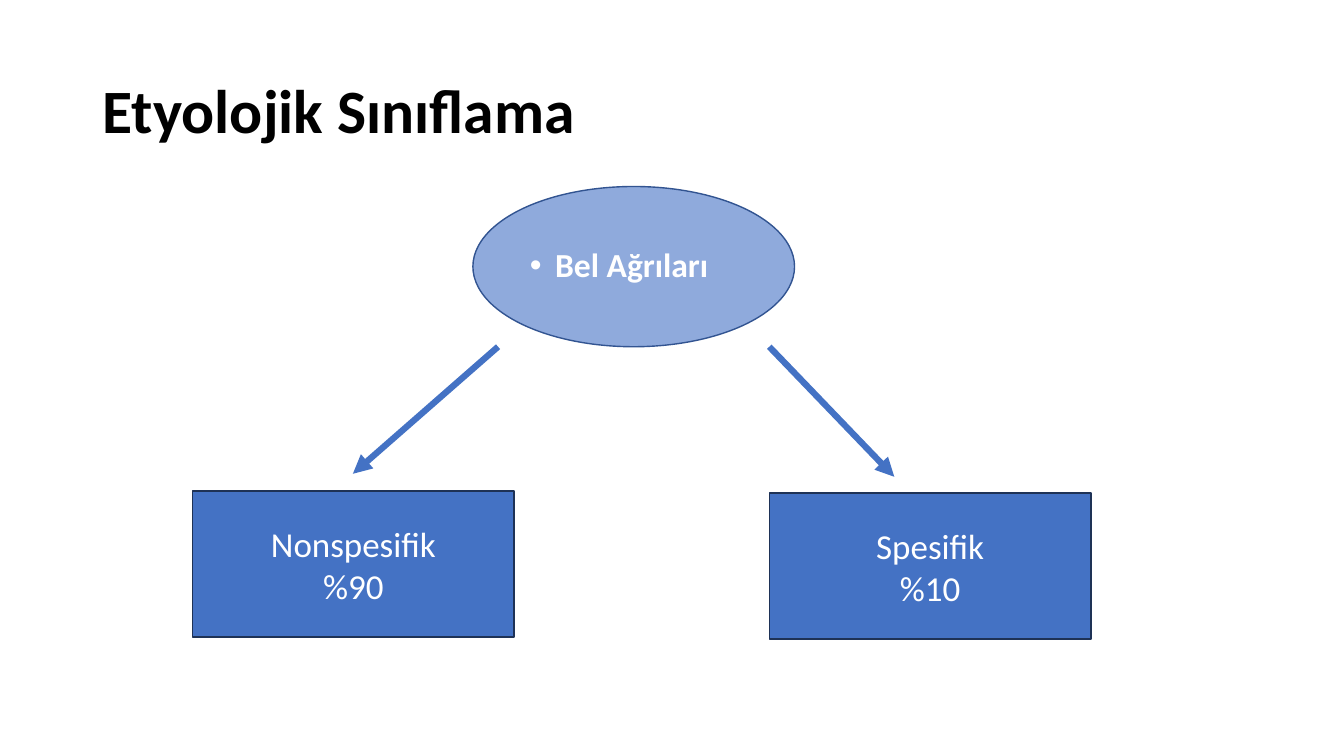
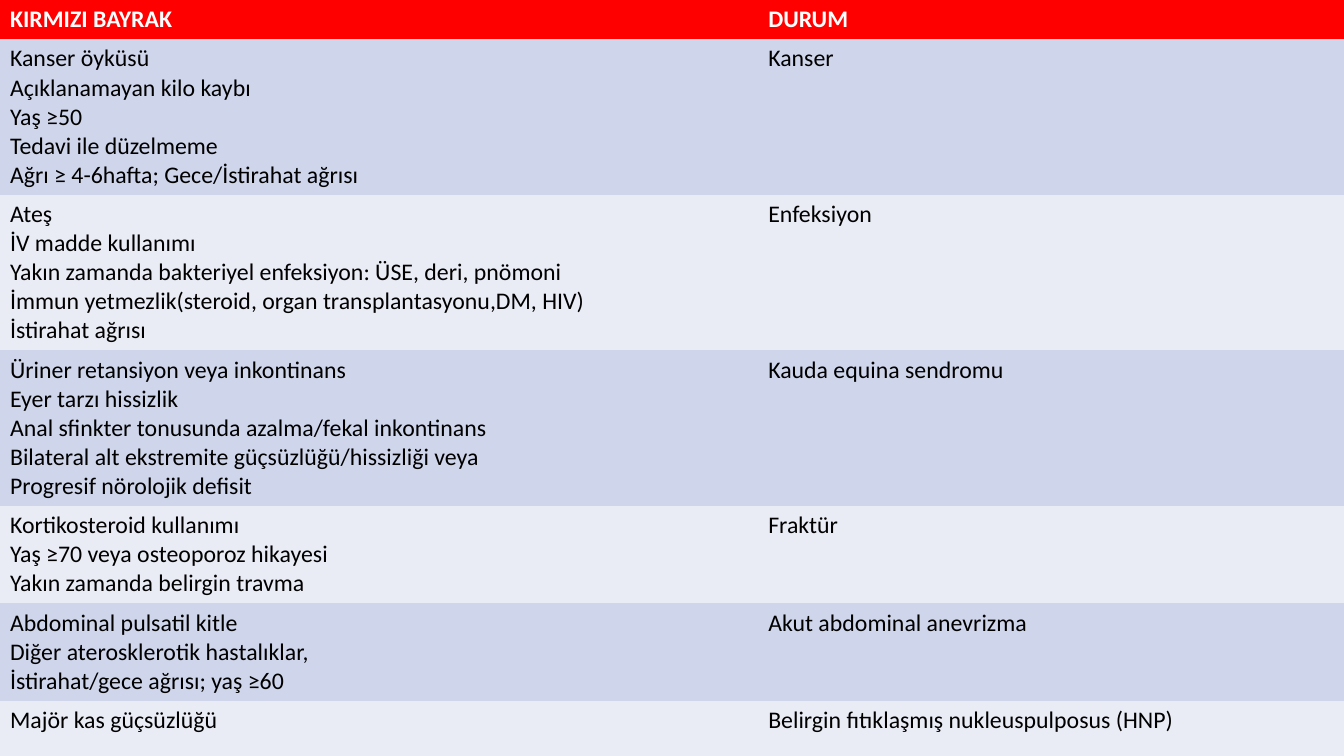
from lxml import etree
from pptx import Presentation
from pptx.dml.color import RGBColor as RGB
from pptx.enum.shapes import MSO_CONNECTOR as LINK, MSO_SHAPE as SHAPE
from pptx.enum.text import MSO_ANCHOR as ANCHOR, PP_ALIGN as ALIGN
from pptx.oxml.ns import qn
from pptx.util import Inches, Pt

THEME = {
    "font": "Calibri",
    "arrow": RGB.from_string("4472C4"),
    "arrow_width": Pt(4.5),
    "header_fill": RGB.from_string("FF0000"),
    "band_fills": [RGB.from_string("CFD5EA"), RGB.from_string("E9EBF5")],
    "topic_fill": RGB.from_string("8FAADC"),
    "topic_line": RGB.from_string("325491"),
    "cause_fill": RGB.from_string("4472C4"),
    "cause_line": RGB.from_string("1E3256"),
    "outline_width": Pt(1),
    "text": {
        "title": {"color": RGB(0, 0, 0), "font": {"size": Pt(44), "bold": True},
                  "paragraph": {"alignment": ALIGN.LEFT, "line_spacing": 0.9}},
        "topic": {"color": RGB(255, 255, 255), "font": {"size": Pt(24), "bold": True},
                  "paragraph": {"alignment": ALIGN.LEFT, "line_spacing": 0.9,
                                "space_before": Pt(10)}},
        "cause": {"color": RGB(255, 255, 255), "font": {"size": Pt(25), "bold": False},
                  "paragraph": {"alignment": ALIGN.CENTER}},
        "header": {"color": RGB(255, 255, 255), "font": {"size": Pt(17), "bold": True},
                   "paragraph": {"alignment": ALIGN.LEFT}},
        "cell": {"color": RGB(0, 0, 0), "font": {"size": Pt(17), "bold": False},
                 "paragraph": {"alignment": ALIGN.LEFT}},
    },
}
NO_GRID_STYLE = "{2D5ABB26-0587-4C30-8999-92F81FD0307C}"


def write(frame, text, role):
    style = THEME["text"][role]
    frame.text = text
    for paragraph in frame.paragraphs:
        for name, value in style["paragraph"].items():
            setattr(paragraph, name, value)
        for run in paragraph.runs:
            run.font.name = THEME["font"]
            run.font.color.rgb = style["color"]
            for name, value in style["font"].items():
                setattr(run.font, name, value)


def add_node(slide, kind, box, text, role):
    node = slide.shapes.add_shape(kind, *map(Inches, box))
    node.shadow.inherit = False
    node.fill.solid()
    node.fill.fore_color.rgb = THEME[role + "_fill"]
    node.line.color.rgb = THEME[role + "_line"]
    node.line.width = THEME["outline_width"]
    node.text_frame.word_wrap = True
    node.text_frame.vertical_anchor = ANCHOR.MIDDLE
    write(node.text_frame, text, role)
    return node


deck = Presentation()
deck.slide_width, deck.slide_height = Inches(13.33), Inches(7.5)
blank = deck.slide_layouts[6]

etiology = deck.slides.add_slide(blank)
title = etiology.shapes.add_textbox(Inches(0.92), Inches(0.4), Inches(11.5), Inches(1.45))
title.text_frame.word_wrap = True
title.text_frame.vertical_anchor = ANCHOR.MIDDLE
write(title.text_frame, "Etyolojik Sınıflama", "title")

topic = add_node(etiology, SHAPE.OVAL, (4.69, 1.85, 3.19, 1.59), "Bel Ağrıları", "topic")
topic_props = topic.text_frame.paragraphs[0]._p.get_or_add_pPr()
topic_props.set("marL", str(Inches(0.25)))
topic_props.set("indent", str(-Inches(0.25)))
etree.SubElement(topic_props, qn("a:buFont"), typeface="Arial")
etree.SubElement(topic_props, qn("a:buChar"), char="•")

causes = [
    ("Nonspesifik\n%90", (1.91, 4.87), (4.94, 3.44), (3.5, 4.7)),
    ("Spesifik\n%10", (7.63, 4.89), (7.63, 3.44), (8.87, 4.73)),
]
for text, corner, start, end in causes:
    arrow = etiology.shapes.add_connector(LINK.STRAIGHT, *map(Inches, start + end))
    arrow.line.color.rgb = THEME["arrow"]
    arrow.line.width = THEME["arrow_width"]
    etree.SubElement(arrow.line._get_or_add_ln(), qn("a:tailEnd"), type="triangle")
    etree.SubElement(arrow._element.spPr, qn("a:effectLst"))
    add_node(etiology, SHAPE.RECTANGLE, corner + (3.19, 1.45), text, "cause")

red_flags = [
    (0.37, ["KIRMIZI BAYRAK"], "DURUM"),
    (1.48, ["Kanser öyküsü", "Açıklanamayan kilo kaybı", "Yaş ≥50", "Tedavi ile düzelmeme",
            "Ağrı ≥ 4-6hafta; Gece/İstirahat ağrısı"], "Kanser"),
    (1.48, ["Ateş", "İV madde kullanımı",
            "Yakın zamanda bakteriyel enfeksiyon: ÜSE, deri, pnömoni",
            "İmmun yetmezlik(steroid, organ transplantasyonu,DM, HIV)",
            "İstirahat ağrısı"], "Enfeksiyon"),
    (1.48, ["Üriner retansiyon veya inkontinans", "Eyer tarzı hissizlik",
            "Anal sfinkter tonusunda azalma/fekal inkontinans",
            "Bilateral alt ekstremite güçsüzlüğü/hissizliği veya",
            "Progresif nörolojik defisit"], "Kauda equina sendromu"),
    (0.93, ["Kortikosteroid kullanımı", "Yaş ≥70 veya osteoporoz hikayesi",
            "Yakın zamanda belirgin travma"], "Fraktür"),
    (0.93, ["Abdominal pulsatil kitle", "Diğer aterosklerotik hastalıklar,",
            "İstirahat/gece ağrısı; yaş ≥60"], "Akut abdominal anevrizma"),
    (0.84, ["Majör kas güçsüzlüğü"], "Belirgin fıtıklaşmış nukleuspulposus (HNP)"),
]
flags_slide = deck.slides.add_slide(blank)
table_height = sum(height for height, _, _ in red_flags)
flags = flags_slide.shapes.add_table(
    len(red_flags), 2, 0, 0, deck.slide_width, Inches(table_height)).table
flags._tbl.tblPr.find(qn("a:tableStyleId")).text = NO_GRID_STYLE
for column, width in zip(flags.columns, (7.52, 5.82)):
    column.width = Inches(width)
for index, (height, signs, condition) in enumerate(red_flags):
    flags.rows[index].height = Inches(height)
    fill = THEME["band_fills"][(index - 1) % 2] if index else THEME["header_fill"]
    for cell, text in zip(flags.rows[index].cells, ("\n".join(signs), condition)):
        cell.fill.solid()
        cell.fill.fore_color.rgb = fill
        write(cell.text_frame, text, "cell" if index else "header")

deck.save("out.pptx")
